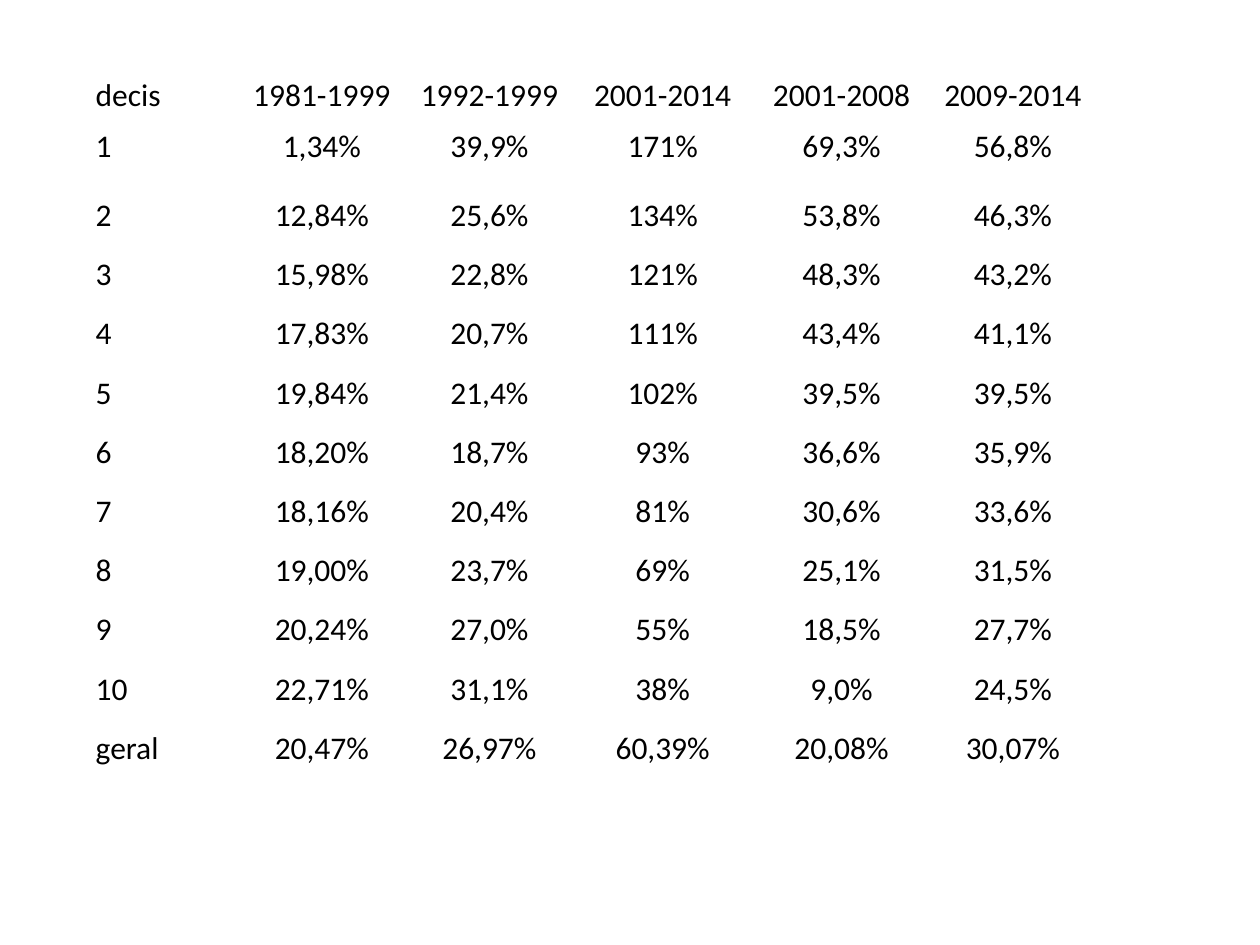
import pptx
import pptx.util
import pptx.dml.color
import pptx.enum.text

Inches = pptx.util.Inches
ALIGN = pptx.enum.text.PP_ALIGN
COLS = [1.14, 1.33, 1.33, 1.42, 1.42, 1.3]
ROWS = [0.3, 0.4, 0.55] + [0.47] * 9
DATA = [
    ["decis", "1981-1999", "1992-1999", "2001-2014", "2001-2008", "2009-2014"],
    ["1", "1,34%", "39,9%", "171%", "69,3%", "56,8%"],
    ["2", "12,84%", "25,6%", "134%", "53,8%", "46,3%"],
    ["3", "15,98%", "22,8%", "121%", "48,3%", "43,2%"],
    ["4", "17,83%", "20,7%", "111%", "43,4%", "41,1%"],
    ["5", "19,84%", "21,4%", "102%", "39,5%", "39,5%"],
    ["6", "18,20%", "18,7%", "93%", "36,6%", "35,9%"],
    ["7", "18,16%", "20,4%", "81%", "30,6%", "33,6%"],
    ["8", "19,00%", "23,7%", "69%", "25,1%", "31,5%"],
    ["9", "20,24%", "27,0%", "55%", "18,5%", "27,7%"],
    ["10", "22,71%", "31,1%", "38%", "9,0%", "24,5%"],
    ["geral", "20,47%", "26,97%", "60,39%", "20,08%", "30,07%"],
]
FONT = {"name": "Calibri", "size": pptx.util.Pt(18), "bold": False}
CELL = {
    "margin_left": Inches(0.01),
    "margin_right": Inches(0.01),
    "margin_top": Inches(0.01),
    "margin_bottom": 0,
    "vertical_anchor": pptx.enum.text.MSO_ANCHOR.BOTTOM,
}
PLAIN = {"first_row": False, "horz_banding": False}


def apply(item, form):
    for key, value in form.items():
        setattr(item, key, value)


def paint(color, code):
    color.rgb = pptx.dml.color.RGBColor.from_string(code)


def fill_cell(cell, text, align):
    apply(cell, CELL)
    cell.fill.background()
    cell.text = text
    para = cell.text_frame.paragraphs[0]
    para.alignment = align
    font = para.runs[0].font
    apply(font, FONT)
    paint(font.color, "000000")


def add_grid(slide, left, top):
    frame = slide.shapes.add_table(
        len(ROWS), len(COLS), Inches(left), Inches(top),
        Inches(sum(COLS)), Inches(sum(ROWS)))
    table = frame.table
    apply(table, PLAIN)
    for col, width in zip(table.columns, COLS):
        col.width = Inches(width)
    for row, height, texts in zip(table.rows, ROWS, DATA):
        row.height = Inches(height)
        for i, text in enumerate(texts):
            fill_cell(row.cells[i], text, ALIGN.CENTER if i else ALIGN.LEFT)


def main():
    deck = pptx.Presentation()
    apply(deck, {"slide_width": Inches(10), "slide_height": Inches(7.5)})
    slide = deck.slides.add_slide(deck.slide_layouts[6])
    add_grid(slide, 0.75, 0.6)
    deck.save("out.pptx")


if __name__ == "__main__":
    main()
